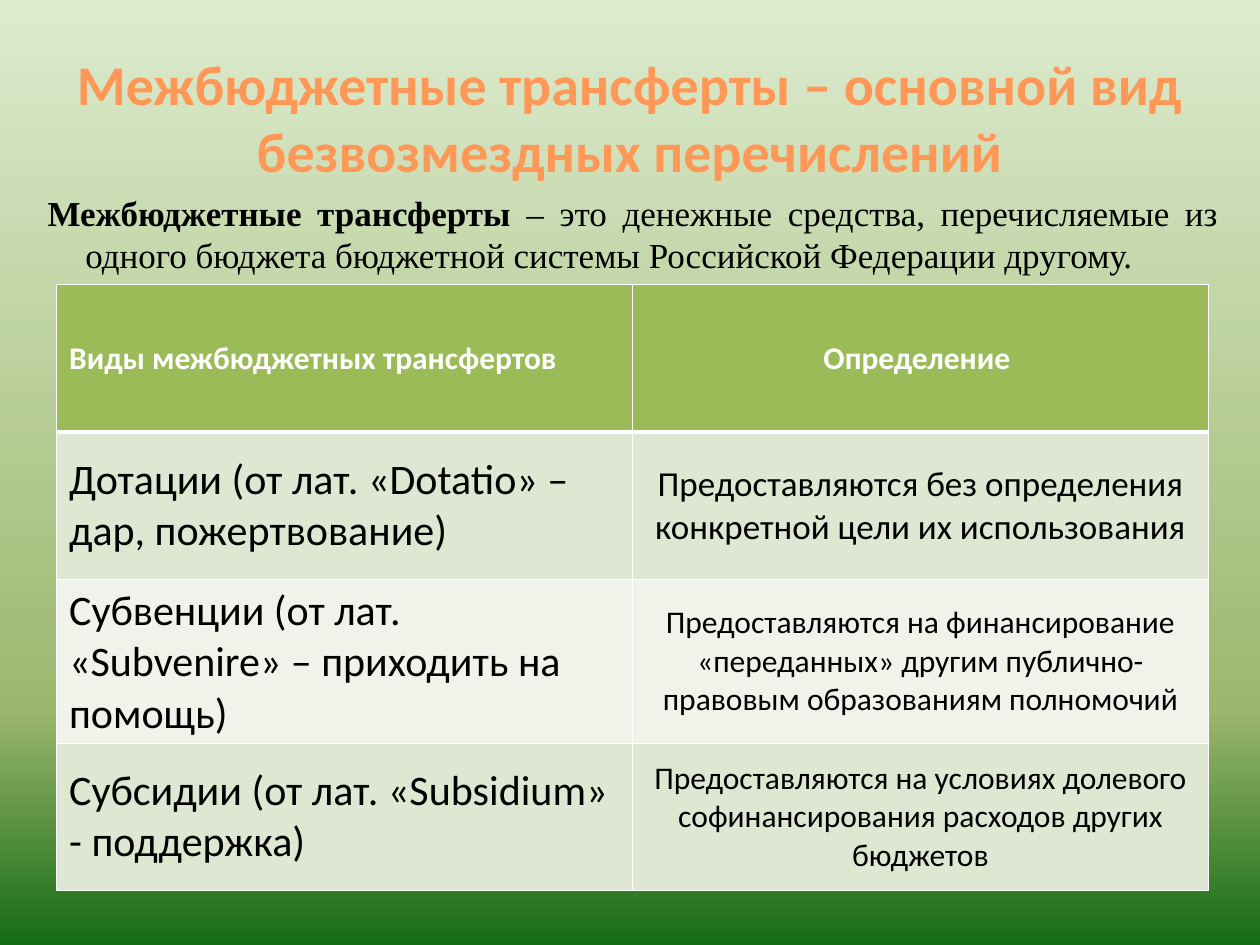
from lxml import etree
from pptx import Presentation
from pptx.dml.color import RGBColor
from pptx.enum import text
from pptx.oxml import ns
from pptx.util import Cm, Pt

HEADER_FILL, DARK_BAND, LIGHT_BAND = "9BBB59", "DEE7D1", "EFF3EA"
WHITE, BLACK = "FFFFFF", "000000"

HEADERS = ("Виды межбюджетных трансфертов", "Определение ")
# Kind of transfer, definition, size of the definition
TRANSFERS = [
    ("Дотации (от лат. «Dotatio» – дар, пожертвование)",
     "Предоставляются без определения конкретной цели их использования", 20),
    ("Субвенции (от лат. «Subvenire» – приходить на помощь)",
     "Предоставляются на финансирование «переданных» другим "
     "публично-правовым образованиям полномочий", 18),
    ("Субсидии (от лат. «Subsidium» - поддержка)",
     "Предоставляются на условиях долевого софинансирования "
     "расходов других бюджетов", 18),
]


def color(value):
    return RGBColor.from_string(value)


def set_gradient(fill, owner, stops):
    """Give fill a top-to-bottom gradient; owner is the element around it."""
    fill.gradient()
    fill.gradient_angle = 270
    stop_list = next(owner.iter(ns.qn("a:gsLst")))
    for old_stop in list(stop_list):
        stop_list.remove(old_stop)
    for percent, value in stops:
        stop = etree.SubElement(stop_list, ns.qn("a:gs"), pos=str(percent * 1000))
        etree.SubElement(stop, ns.qn("a:srgbClr"), val=value)


def format_run(run, size, value=BLACK, bold=False, name="Calibri"):
    run.font.name = name
    run.font.size = Pt(size)
    run.font.bold = bold
    run.font.color.rgb = color(value)


def add_text_frame(slide, left, top, width, height):
    frame = slide.shapes.add_textbox(Cm(left), Cm(top), Cm(width), Cm(height)).text_frame
    frame.word_wrap = True
    return frame


def add_title(slide):
    frame = add_text_frame(slide, 1.27, 0.76, 22.86, 3.18)
    frame.vertical_anchor = text.MSO_ANCHOR.MIDDLE
    frame.text = "Межбюджетные трансферты – основной вид безвозмездных перечислений"
    title = frame.paragraphs[0]
    title.alignment = text.PP_ALIGN.CENTER
    run = title.runs[0]
    format_run(run, 32, bold=True)
    set_gradient(run.font.fill, run._r, [(0, "9D4700"), (78, "FF9856"), (100, "FFF5F1")])


def add_definition(slide):
    frame = add_text_frame(slide, 0.71, 3.73, 24.1, 1.96)
    definition = frame.paragraphs[0]
    definition.alignment = text.PP_ALIGN.JUSTIFY
    definition.space_before = Pt(5.8)
    # Hanging indent
    properties = definition._p.get_or_add_pPr()
    properties.set("marL", str(Cm(0.76)))
    properties.set("indent", str(-Cm(0.76)))
    parts = [
        ("Межбюджетные трансферты ", True),
        ("– это денежные средства, перечисляемые из одного бюджета "
         "бюджетной системы Российской Федерации другому.", False),
    ]
    for wording, bold in parts:
        run = definition.add_run()
        run.text = wording
        format_run(run, 20, bold=bold, name="Times New Roman")


def set_borders(cell, top, bottom):
    properties = cell._tc.get_or_add_tcPr()
    for side, width in (("L", 1), ("R", 1), ("T", top), ("B", bottom)):
        line = etree.SubElement(properties, ns.qn(f"a:ln{side}"), w=str(Pt(width)))
        fill = etree.SubElement(line, ns.qn("a:solidFill"))
        etree.SubElement(fill, ns.qn("a:srgbClr"), val=WHITE)


def fill_cell(cell, wording, size, fill, centered, header=False, top=1):
    cell.text = wording
    cell.vertical_anchor = text.MSO_ANCHOR.MIDDLE
    paragraph = cell.text_frame.paragraphs[0]
    paragraph.alignment = text.PP_ALIGN.CENTER if centered else text.PP_ALIGN.LEFT
    format_run(paragraph.runs[0], size, WHITE if header else BLACK, header)
    set_borders(cell, top, 3 if header else 1)
    cell.fill.solid()
    cell.fill.fore_color.rgb = color(fill)


def add_transfer_table(slide):
    table = slide.shapes.add_table(
        len(TRANSFERS) + 1, 2, Cm(1.14), Cm(5.74), Cm(23.22), Cm(12.23)).table
    for row, height in zip(table.rows, (2.97, 2.97, 3.3, 2.97)):
        row.height = Cm(height)
    for column, header in enumerate(HEADERS):
        fill_cell(table.cell(0, column), header, 18, HEADER_FILL, column == 1, header=True)
    for row, (kind, meaning, size) in enumerate(TRANSFERS, start=1):
        band = DARK_BAND if row % 2 else LIGHT_BAND
        top = 3 if row == 1 else 1
        fill_cell(table.cell(row, 0), kind, 24, band, False, top=top)
        fill_cell(table.cell(row, 1), meaning, size, band, True, top=top)


def main():
    deck = Presentation()
    deck.slide_width, deck.slide_height = Cm(25.4), Cm(19.05)
    slide = deck.slides.add_slide(deck.slide_layouts[6])
    # Background
    set_gradient(slide.background.fill, slide.element,
                 [(0, "DDEBCF"), (75, "9CB86E"), (100, "156B13")])
    # Content
    add_title(slide)
    add_definition(slide)
    add_transfer_table(slide)
    deck.save("out.pptx")


if __name__ == "__main__":
    main()
